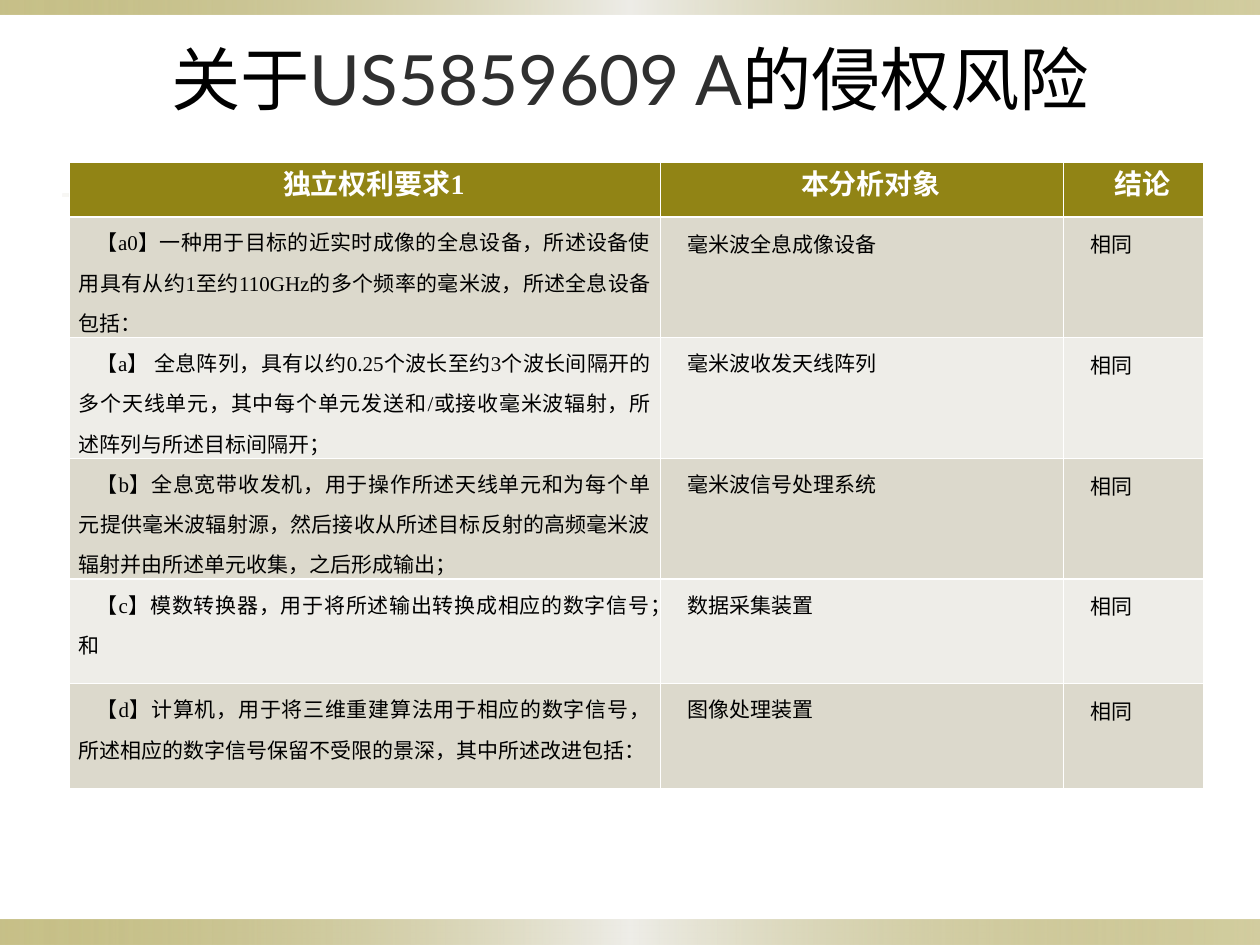
from lxml import etree
from pptx import Presentation
from pptx.dml.color import RGBColor
from pptx.enum.shapes import MSO_SHAPE as Shape
from pptx.enum.text import MSO_ANCHOR as Anchor, PP_ALIGN as Align
from pptx.oxml.ns import qn
from pptx.util import Cm, Pt

OLIVE = RGBColor(0x91, 0x84, 0x15)
SAND = RGBColor(0xDC, 0xD9, 0xCC)
PALE = RGBColor(0xEE, 0xED, 0xE8)
WHITE = RGBColor(0xFF, 0xFF, 0xFF)
BLACK = RGBColor(0, 0, 0)
CHARCOAL = RGBColor(0x2F, 0x2F, 0x2F)
SERIF, SANS = "Times New Roman", "Lato"

# Gradient stops: position %, colour, opacity %
BAND_STOPS = [(0, OLIVE, 50), (50, PALE, 100), (100, OLIVE, 40)]
RULE_STOPS = [(0, SAND, 20), (50, OLIVE, 40), (100, SAND, 50)]

# Left, top, width, height in cm
BANDS = [
    ((0, 18.54, 25.4, 0.51), BAND_STOPS),
    ((0, 0, 25.4, 0.3), BAND_STOPS),
    ((1.27, 3.91, 22.86, 0.05), RULE_STOPS),
]

TITLE = [("关于", SERIF, BLACK), ("US5859609 A", SANS, CHARCOAL),
         ("的侵权风险", SERIF, BLACK)]

COLUMN_WIDTHS = [11.91, 8.13, 2.82]
ROW_HEIGHTS = [1.09, 2.11, 1.85, 1.85, 2.11, 2.11]
HEADER = ["独立权利要求1", "本分析对象", "结论"]
CLAIMS = [
    ("【a0】一种用于目标的近实时成像的全息设备，所述设备使用具有从约1至约110GHz的多个频率的毫米波，所述全息设备包括：",
     "毫米波全息成像设备"),
    ("【a】 全息阵列，具有以约0.25个波长至约3个波长间隔开的多个天线单元，其中每个单元发送和/或接收毫米波辐射，所述阵列与所述目标间隔开；",
     "毫米波收发天线阵列"),
    ("【b】全息宽带收发机，用于操作所述天线单元和为每个单元提供毫米波辐射源，然后接收从所述目标反射的高频毫米波辐射并由所述单元收集，之后形成输出；",
     "毫米波信号处理系统"),
    ("【c】模数转换器，用于将所述输出转换成相应的数字信号；和", "数据采集装置"),
    ("【d】计算机，用于将三维重建算法用于相应的数字信号，所述相应的数字信号保留不受限的景深，其中所述改进包括：",
     "图像处理装置"),
]
CONCLUSION = "相同"

HEADER_FONT = {"size": Pt(16), "name": SERIF, "bold": True}
BODY_FONT = {"size": Pt(12), "name": SERIF, "bold": False}
CELL_MARGINS = {"margin_left": Cm(0.19), "margin_right": Cm(0.19),
                "margin_top": 0, "margin_bottom": 0}
# The deep bottom margin lifts the single title line
TITLE_FRAME = {"word_wrap": True, "vertical_anchor": Anchor.MIDDLE,
               "margin_top": 0, "margin_bottom": Cm(1.55)}


def apply_format(target, values):
    for name, value in values.items():
        setattr(target, name, value)


def add_run(paragraph, text, font_format, colour):
    run = paragraph.add_run()
    run.text = text
    apply_format(run.font, font_format)
    run.font.color.rgb = colour


def add_band(slide, box, stops):
    shape = slide.shapes.add_shape(Shape.RECTANGLE, *map(Cm, box))
    shape.shadow.inherit = False
    shape.line.fill.background()
    shape.fill.gradient()
    shape.fill.gradient_angle = 0
    stop_list = shape._element.spPr.find(".//" + qn("a:gsLst"))
    for stop in list(stop_list):
        stop_list.remove(stop)
    for position, colour, opacity in stops:
        stop = etree.SubElement(stop_list, qn("a:gs"), pos=str(position * 1000))
        fill = etree.SubElement(stop, qn("a:srgbClr"), val=str(colour))
        etree.SubElement(fill, qn("a:alpha"), val=str(opacity * 1000))


def add_title(slide):
    shape = slide.shapes.add_textbox(Cm(1.27), Cm(0.76), Cm(22.86), Cm(3.18))
    apply_format(shape.text_frame, TITLE_FRAME)
    paragraph = shape.text_frame.paragraphs[0]
    paragraph.alignment = Align.CENTER
    for text, font_name, colour in TITLE:
        add_run(paragraph, text, {"size": Pt(39.6), "name": font_name}, colour)


def fill_cell(cell, text, fill, font_format, colour, alignment, spacing):
    cell.fill.solid()
    cell.fill.fore_color.rgb = fill
    apply_format(cell, CELL_MARGINS)
    paragraph = cell.text_frame.paragraphs[0]
    apply_format(paragraph, {"alignment": alignment, "line_spacing": Pt(spacing)})
    properties = paragraph._p.get_or_add_pPr()
    properties.set("marL", "0")
    properties.set("indent", str(Cm(0.36)))
    add_run(paragraph, text, font_format, colour)


def add_claim_table(slide):
    frame = slide.shapes.add_table(
        len(ROW_HEIGHTS), len(COLUMN_WIDTHS), Cm(1.4), Cm(3.28),
        Cm(sum(COLUMN_WIDTHS)), Cm(sum(ROW_HEIGHTS)))
    table = frame.table
    for column, width in zip(table.columns, COLUMN_WIDTHS):
        column.width = Cm(width)
    for row, height in zip(table.rows, ROW_HEIGHTS):
        row.height = Cm(height)

    # Header row
    for column, text in enumerate(HEADER):
        fill_cell(table.cell(0, column), text, OLIVE, HEADER_FONT, WHITE,
                  Align.CENTER, 23)

    # Claim rows in alternating colours
    for row, claim in enumerate(CLAIMS, start=1):
        fill = SAND if row % 2 else PALE
        for column, text in enumerate((*claim, CONCLUSION)):
            spacing = 24 if column == 2 or (row, column) == (1, 1) else 23
            fill_cell(table.cell(row, column), text, fill, BODY_FONT, BLACK,
                      Align.JUSTIFY, spacing)


def main():
    presentation = Presentation()
    presentation.slide_width, presentation.slide_height = Cm(25.4), Cm(19.05)
    slide = presentation.slides.add_slide(presentation.slide_layouts[6])
    for box, stops in BANDS:
        add_band(slide, box, stops)
    add_title(slide)
    add_claim_table(slide)
    presentation.save("out.pptx")


if __name__ == "__main__":
    main()
